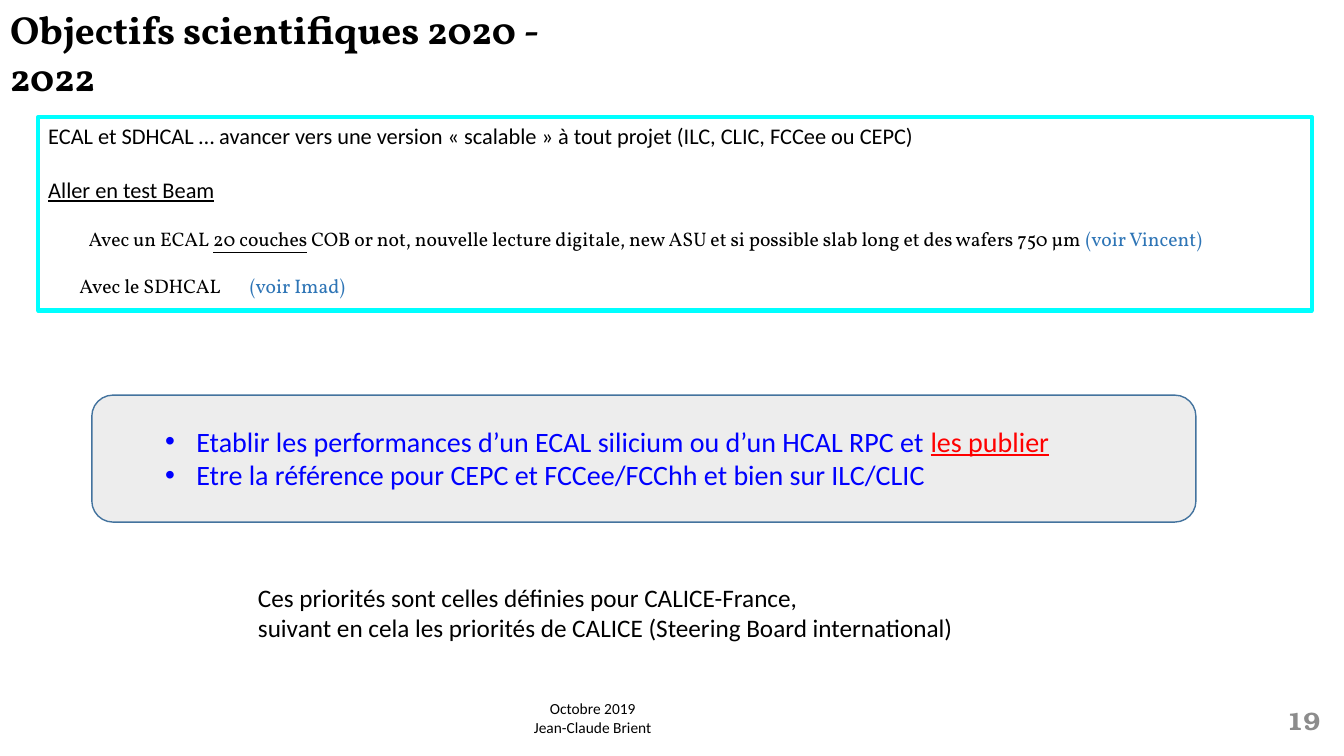
from dataclasses import dataclass, field
from typing import Any

from pptx import Presentation, util as u
from pptx.dml.color import RGBColor
from pptx.enum import shapes as s, text as t
from pptx.oxml.ns import qn
from lxml import etree

WIDE, HIGH = 13.33, 7.5
SANS, SERIF, BONUM = "Calibri", "Vollkorn", "TeX Gyre Bonum"
BLACK, BLUE, RED, STEEL = "000000", "0000FF", "FF0000", "2E75B6"
GREY, PALE, EDGE, CYAN = "8C8C8C", "EDEDED", "43739E", "00FFFF"


@dataclass
class Run:
    words: str
    form: dict[str, Any] = field(default_factory=dict)
    color: str = BLACK


@dataclass
class Para:
    runs: list[Run]
    form: dict[str, Any] = field(default_factory=dict)
    left: float = 0
    first: float = 0
    tab: float = 0
    bullet: str = ""


@dataclass
class Box:
    """A text block; area is left, top, width, height in percent of the slide."""
    area: tuple[float, float, float, float]
    font: dict[str, Any]
    paras: list[Para]
    wrap: bool = True
    anchor: t.MSO_ANCHOR = t.MSO_ANCHOR.TOP


def tint(code: str) -> RGBColor:
    return RGBColor.from_string(code)


def style(item: Any, form: dict[str, Any]) -> None:
    for key, value in form.items():
        setattr(item, key, value)


def place(area: tuple[float, float, float, float]) -> list[int]:
    sides = (WIDE, HIGH, WIDE, HIGH)
    return [u.Inches(side * share / 100) for side, share in zip(sides, area)]


def indent(line: Any, para: Para) -> None:
    """Set margin, first-line indent, bullet and tab stop."""
    props = line._p.get_or_add_pPr()
    props.set("marL", str(u.Inches(para.left)))
    props.set("indent", str(u.Inches(para.first)))
    if para.bullet:
        etree.SubElement(props, qn("a:buFont"), typeface="Arial")
        etree.SubElement(props, qn("a:buChar"), char=para.bullet)
    if para.tab:
        stops = etree.SubElement(props, qn("a:tabLst"))
        etree.SubElement(stops, qn("a:tab"), pos=str(u.Inches(para.tab)), algn="l")


def write(shape: Any, box: Box) -> None:
    frame = shape.text_frame
    style(frame, {"word_wrap": box.wrap, "auto_size": t.MSO_AUTO_SIZE.NONE,
                  "vertical_anchor": box.anchor})
    for num, para in enumerate(box.paras):
        line = frame.add_paragraph() if num else frame.paragraphs[0]
        style(line, {"alignment": t.PP_ALIGN.LEFT} | para.form)
        indent(line, para)
        for run in para.runs:
            part = line.add_run()
            part.text = run.words
            style(part.font, box.font | run.form)
            part.font.color.rgb = tint(run.color)


def panel(slide: Any, kind: s.MSO_SHAPE, area: tuple[float, float, float, float],
          edge: str, width: float, fill: str = "") -> Any:
    shape = slide.shapes.add_shape(kind, *place(area))
    shape.shadow.inherit = False
    if fill:
        shape.fill.solid()
        shape.fill.fore_color.rgb = tint(fill)
    else:
        shape.fill.background()
    shape.line.color.rgb = tint(edge)
    shape.line.width = u.Pt(width)
    return shape


def font(name: str, size: float, bold: bool = False) -> dict[str, Any]:
    return {"name": name, "size": u.Pt(size), "bold": bold}


UNDER = {"underline": True}
DETAIL = font(SERIF, 14)
DOUBLE = {"line_spacing": 2.0}
CENTER = {"alignment": t.PP_ALIGN.CENTER}
RIGHT = {"alignment": t.PP_ALIGN.RIGHT}
ITEM = {"left": 0.31, "first": -0.31, "bullet": "•"}

TITLE = Box((0, 0, 47.04, 14), font(SERIF, 28, True),
            [Para([Run("Objectifs scientifiques 2020 - 2022")], {"line_spacing": 1.0})])

GOALS = Box((2.85, 15.47, 94.75, 25.6), font(SANS, 16), [
    Para([Run("ECAL et SDHCAL … avancer vers une version « scalable » "
              "à tout projet (ILC, CLIC, FCCee ou CEPC)")]),
    Para([Run("Aller en test Beam", UNDER)], {"space_before": u.Pt(19.5)}),
    Para([Run("Avec un ECAL ", DETAIL), Run("20 couches", DETAIL | UNDER),
          Run(" COB or not, nouvelle lecture digitale, new ASU et si possible "
              "slab long et des wafers 750 µm ", DETAIL),
          Run("(voir Vincent)", DETAIL, STEEL)], DOUBLE, first=0.4),
    Para([Run("Avec le SDHCAL\t", DETAIL), Run("(voir Imad)", DETAIL, STEEL)],
         DOUBLE, first=0.31, tab=1.94),
])

TEXTS = [
    Box((11.55, 55.47, 77.34, 14.8), font(SANS, 20), [
        Para([Run("Etablir les performances d’un ECAL silicium ou d’un HCAL RPC et ",
                  color=BLUE), Run("les publier", UNDER, RED)], **ITEM),
        Para([Run("Etre la référence pour CEPC et FCCee/FCChh et bien sur ILC/CLIC",
                  color=BLUE)], **ITEM),
    ]),
    Box((18.45, 76.4, 54.24, 9.47), font(SANS, 18), [
        Para([Run("Ces priorités sont celles définies pour CALICE-France,")]),
        Para([Run("suivant en cela les priorités de CALICE "
                  "(Steering Board international)")]),
    ]),
    Box((38.93, 91.87, 10.35, 6.27), font(SANS, 11), [
        Para([Run("Octobre 2019")], CENTER),
        Para([Run("Jean-Claude Brient")], CENTER),
    ], wrap=False),
    Box((76.44, 92.67, 22.51, 5.33), font(BONUM, 18, True),
        [Para([Run("19", color=GREY)], RIGHT)], anchor=t.MSO_ANCHOR.MIDDLE),
]


def main() -> None:
    deck = Presentation()
    style(deck, {"slide_width": u.Inches(WIDE), "slide_height": u.Inches(HIGH)})
    slide = deck.slides.add_slide(deck.slide_layouts.get_by_name("Title Only"))
    title = slide.shapes.title
    style(title, dict(zip(("left", "top", "width", "height"), place(TITLE.area))))
    write(title, TITLE)
    panel(slide, s.MSO_SHAPE.ROUNDED_RECTANGLE, (6.83, 52.27, 82.15, 16.8), EDGE, 1, PALE)
    write(panel(slide, s.MSO_SHAPE.RECTANGLE, GOALS.area, CYAN, 3), GOALS)
    for box in TEXTS:
        write(slide.shapes.add_textbox(*place(box.area)), box)
    deck.save("out.pptx")


if __name__ == "__main__":
    main()
